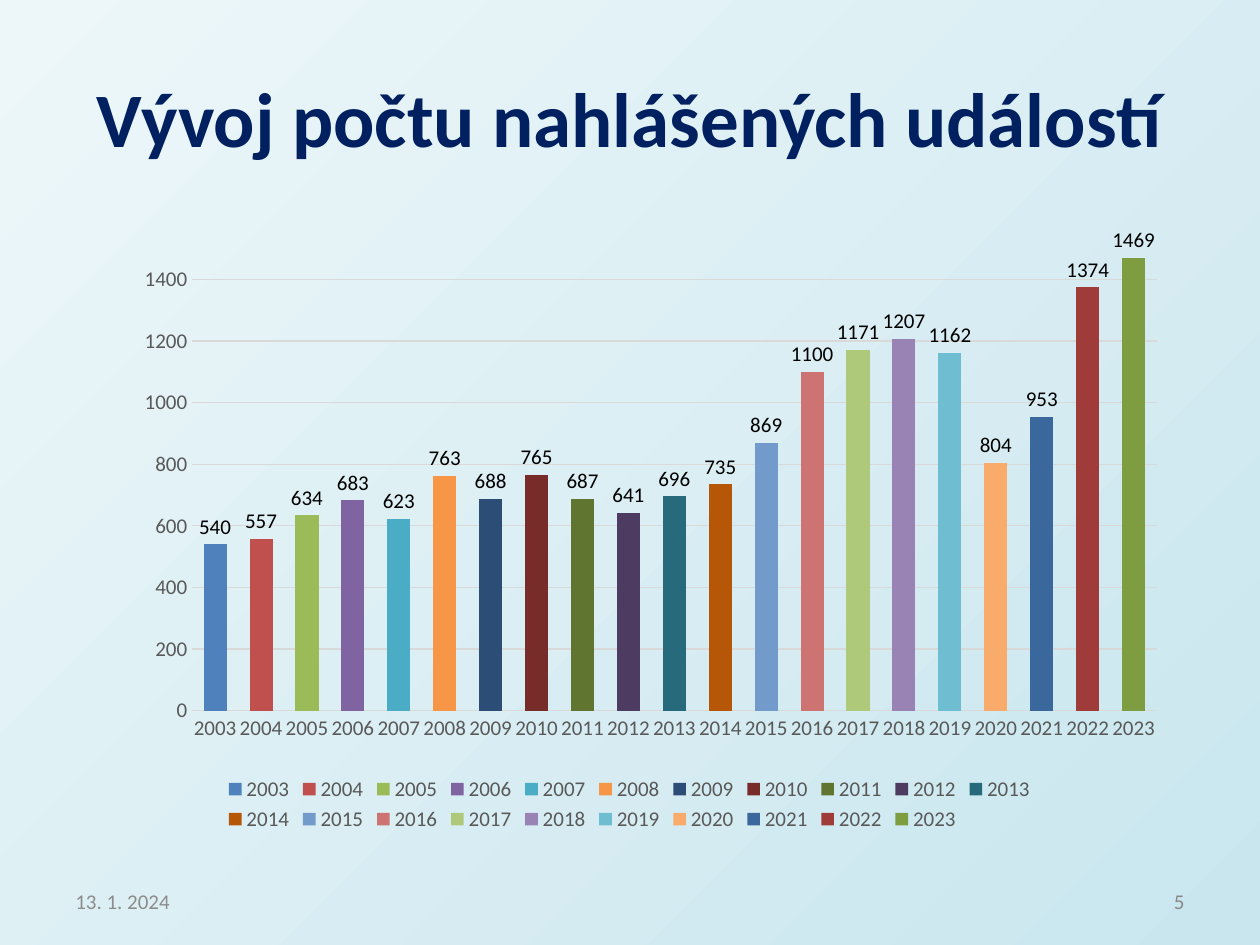
from pptx import Presentation
from pptx.chart.data import CategoryChartData
from pptx.dml.color import RGBColor
from pptx.enum.chart import XL_CHART_TYPE as Kind, XL_LABEL_POSITION as Spot
from pptx.enum.chart import XL_LEGEND_POSITION as Side, XL_TICK_MARK as Tick
from pptx.enum.text import MSO_ANCHOR as Anchor, PP_ALIGN as Align
from pptx.oxml import parse_xml
from pptx.oxml.ns import nsdecls, qn
from pptx.util import Inches, Pt

# Content
TITLE = "Vývoj počtu nahlášených událostí"
DATE, PAGE = "13. 1. 2024", "5"
START = 2003
COUNTS = [540, 557, 634, 683, 623, 763, 688, 765, 687, 641, 696,
          735, 869, 1100, 1171, 1207, 1162, 804, 953, 1374, 1469]
COLORS = ["4F81BD", "C0504D", "9BBB59", "8064A2", "4BACC6", "F79646", "2C4D75",
          "772C2A", "5F7530", "4D3B62", "276A7C", "B65708", "729ACA", "CD7371",
          "AFC97A", "9983B5", "6FBDD1", "F9AB6B", "3A679C", "9F3B38", "7E9D40"]
PLOT = {"x": 0.097, "y": 0.076, "w": 0.889, "h": 0.726}
FONT, GRAY, GRID = "Calibri", "595959", "D9D9D9"


def rgb(code):
    return RGBColor.from_string(code)


def style(font, size, color, bold=False):
    font.name, font.size, font.bold = FONT, Pt(size), bold
    font.color.rgb = rgb(color)


def write(shape, text, size, color, align, bold=False):
    frame = shape.text_frame
    frame.text = text
    frame.word_wrap = True
    frame.vertical_anchor = Anchor.MIDDLE
    par = frame.paragraphs[0]
    par.alignment = align
    style(par.runs[0].font, size, color, bold)


def rule(line):
    line.color.rgb = rgb(GRID)
    line.width = Pt(0.75)


prs = Presentation()
prs.slide_width, prs.slide_height = Inches(10), Inches(7.5)
slide = prs.slides.add_slide(prs.slide_layouts[5])

# Background
fill = slide.background.fill
fill.gradient()
fill.gradient_angle = 315
for stop, code in zip(fill.gradient_stops, ["EDF7F9", "C9E6EE"]):
    stop.color.rgb = rgb(code)

# Title
title = slide.shapes.title
title.left, title.top = Inches(0.5), Inches(0.3)
title.width, title.height = Inches(9), Inches(1.25)
write(title, TITLE, 44, "002060", Align.CENTER, True)

# Date and page number
for text, left, color, align in [(DATE, 0.5, "8C8C8C", Align.LEFT),
                                 (PAGE, 7.17, "898989", Align.RIGHT)]:
    box = slide.shapes.add_textbox(Inches(left), Inches(6.95), Inches(2.33), Inches(0.4))
    write(box, text, 12, color, align)

# Chart
data = CategoryChartData()
data.categories = [str(START + i) for i in range(len(COUNTS))]
data.add_series("Series 1", COUNTS)
chart = slide.shapes.add_chart(Kind.COLUMN_CLUSTERED, Inches(0.69), Inches(1.59),
                               Inches(8.61), Inches(5.05), data).chart
chart.has_title = False
style(chart.font, 10, "000000")

# Columns and labels
plot = chart.plots[0]
plot.gap_width, plot.overlap = 99, -13
plot.vary_by_categories = True
for i, code in enumerate(COLORS):
    paint = plot.series[0].points[i].format.fill
    paint.solid()
    paint.fore_color.rgb = rgb(code)
labels = plot.series[0].data_labels
labels.show_value = True
labels.position = Spot.OUTSIDE_END
style(labels.font, 12, "000000")

# Axes
years, scale = chart.category_axis, chart.value_axis
for axis in (years, scale):
    axis.major_tick_mark = axis.minor_tick_mark = Tick.NONE
    style(axis.tick_labels.font, 12, GRAY)
rule(years.format.line)
scale.format.line.fill.background()
scale.minimum_scale, scale.maximum_scale, scale.major_unit = 0, 1500, 200
rule(scale.major_gridlines.format.line)

# Legend
chart.has_legend = True
chart.legend.position = Side.BOTTOM
chart.legend.include_in_layout = False
style(chart.legend.font, 12, GRAY)

# Fixed inner plot area
area = chart.element.find(".//" + qn("c:plotArea"))
for old in area.findall(qn("c:layout")):
    area.remove(old)
modes = "".join(f'<c:{k}Mode val="edge"/>' for k in "xy")
sizes = "".join(f'<c:{k} val="{v}"/>' for k, v in PLOT.items())
area.insert(0, parse_xml(
    f'<c:layout {nsdecls("c")}><c:manualLayout><c:layoutTarget val="inner"/>'
    f'{modes}{sizes}</c:manualLayout></c:layout>'))

prs.save("out.pptx")
